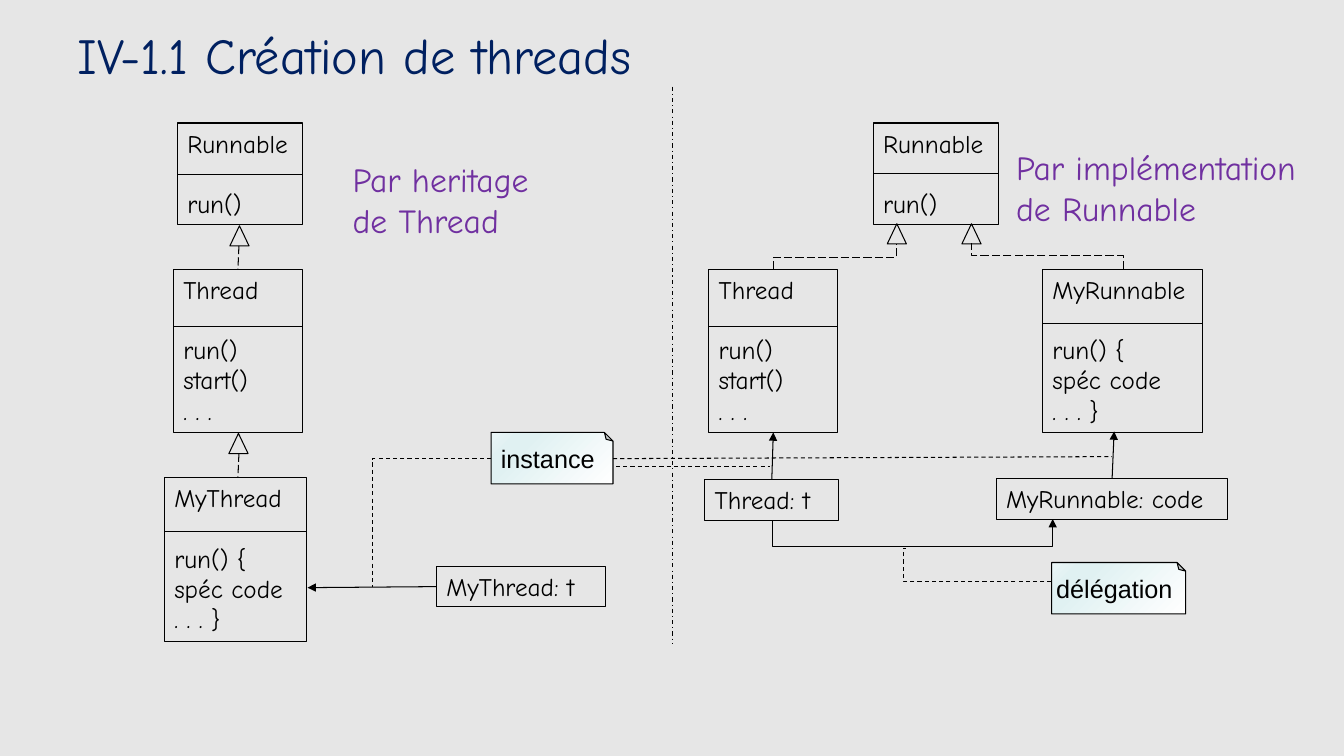
import pptx
import pptx.dml.color
import pptx.enum.dml
import pptx.enum.shapes
import pptx.enum.text
import pptx.oxml
import pptx.oxml.ns
import pptx.util
from lxml import etree

Inches = pptx.util.Inches
SHAPES = pptx.enum.shapes.MSO_SHAPE
CONNECTORS = pptx.enum.shapes.MSO_CONNECTOR
DASHES = pptx.enum.dml.MSO_LINE
ANCHORS = pptx.enum.text.MSO_ANCHOR
ALIGNMENTS = pptx.enum.text.PP_ALIGN

THEME = {
    "background": "E6E6E6", "title": "002060", "ink": "000000", "caption": "7030A0",
    "font": "Comic Neue", "note_font": "Arial",
    "title_size": 36, "caption_size": 24, "body_size": 18,
    "member_gap": 21.5, "line_width": 0.75,
    "note_stops": ((0, "FFFFFF"), (74, "E0F1F2"), (83, "E0F1F2"), (100, "EBF6F7")),
    "note_angle": 315,
}

TITLE = ("IV-1.1 Création de threads", (0.67, 0.22, 12, 0.64))
CAPTIONS = [
    (("Par heritage", "de Thread"), (3.4, 1.53, 2.24, 0.91)),
    (("Par implémentation", "de Runnable"), (9.98, 1.41, 3.18, 0.91)),
]
THREAD_MEMBERS = ("run()", "start()", ". . .")
CUSTOM_MEMBERS = ("run() {", "spéc code", ". . . }")
CLASSES = {
    "left Runnable": ("Runnable", ("run()",), (1.76, 1.22, 1.24, 1.01), 0.51),
    "left Thread": ("Thread", THREAD_MEMBERS, (1.72, 2.67, 1.28, 1.62), 0.57),
    "MyThread": ("MyThread", CUSTOM_MEMBERS, (1.63, 4.74, 1.41, 1.62), 0.53),
    "right Runnable": ("Runnable", ("run()",), (8.66, 1.22, 1.24, 1.01), 0.5),
    "right Thread": ("Thread", THREAD_MEMBERS, (7.03, 2.67, 1.28, 1.62), 0.57),
    "MyRunnable": ("MyRunnable", CUSTOM_MEMBERS, (10.34, 2.67, 1.59, 1.62), 0.54),
}
OBJECTS = {
    "MyThread: t": (4.33, 5.62, 1.68, 0.4),
    "Thread: t": (6.99, 4.76, 1.33, 0.4),
    "MyRunnable: code": (9.88, 4.75, 2.3, 0.4),
}
NOTES = [
    ("instance", (5.22, 3.94, 0.51, 1.21)),
    ("délégation", (10.84, 5.17, 0.51, 1.33)),
]
TRIANGLE_SIZE = (0.19, 0.2)
TRIANGLES = [(8.8, 2.22), (9.54, 2.22), (2.28, 2.24), (2.27, 4.3)]
STEMS = [((2.37, 2.44), (2.36, 2.67)), ((2.37, 4.5), (2.36, 4.73))]
INSTANCE_ARROWS = [
    ("MyThread: t", 1, (3.05, 5.83), None),
    ("Thread: t", 0, (7.67, 4.29), "right Thread"),
    ("MyRunnable: code", 0, (11.05, 4.28), None),
]
NOTE_LINES = [((6.08, 4.55), (11.03, 4.53)), ((6.11, 4.63), (7.64, 4.63))]
SEPARATOR = ((6.67, 0.86), (6.67, 6.39))
ELBOWS = [
    ("bentConnector3", (10.26, 1.79, 0.26, 1.5), 270, "V", (), DASHES.LONG_DASH, False),
    ("bentConnector3", (8.16, 1.94, 0.25, 1.22), 90, "HV", (), DASHES.LONG_DASH, False),
    ("bentConnector2", (3.69, 4.55, 1.18, 1.27), 180, "V", (), DASHES.DASH, False),
    ("bentConnector4", (9.04, 3.77, 0.02, 2.78), 90, "HV", (-12.5, 1), None, True),
    ("bentConnector3", (8.99, 5.44, 1.44, 0.33), 180, "", (1.02,), DASHES.DASH, False),
]


def color(name):
    return pptx.dml.color.RGBColor.from_string(THEME[name])


def write_text(shape, lines, *, size="body_size", font="font", ink="ink", gap_at=None,
               align=ALIGNMENTS.LEFT, anchor=ANCHORS.TOP, inset=None):
    frame = shape.text_frame
    frame.word_wrap = True
    frame.vertical_anchor = anchor
    if inset is not None:
        frame.margin_left = frame.margin_right = Inches(inset)
        frame.margin_top = frame.margin_bottom = Inches(inset)
    for index, line in enumerate(lines):
        paragraph = frame.paragraphs[0] if index == 0 else frame.add_paragraph()
        paragraph.alignment = align
        if index == gap_at:
            paragraph.space_before = pptx.util.Pt(THEME["member_gap"])
        run = paragraph.add_run()
        run.text = line
        run.font.name = THEME[font]
        run.font.size = pptx.util.Pt(THEME[size])
        run.font.color.rgb = color(ink)


def draw_line(target, dash=None):
    target.line.color.rgb = color("ink")
    target.line.width = pptx.util.Pt(THEME["line_width"])
    if dash is not None:
        target.line.dash_style = dash


def add_outline(slide, kind, box):
    shape = slide.shapes.add_shape(kind, *map(Inches, box))
    shape.shadow.inherit = False
    shape.fill.background()
    draw_line(shape)
    return shape


def add_line(slide, start, end, *, kind=CONNECTORS.STRAIGHT, dash=None, arrow=False):
    connector = slide.shapes.add_connector(kind, *map(Inches, (*start, *end)))
    draw_line(connector, dash)
    if arrow:
        line_element = connector.line._get_or_add_ln()
        etree.SubElement(line_element, pptx.oxml.ns.qn("a:tailEnd"), type="triangle")
    etree.SubElement(connector._element.spPr, pptx.oxml.ns.qn("a:effectLst"))
    return connector


def add_elbow(slide, preset, box, rotation, flips, adjustments, dash, arrow):
    left, top, width, height = box
    connector = add_line(slide, (left, top), (left + width, top + height),
                         kind=CONNECTORS.ELBOW, dash=dash, arrow=arrow)
    properties = connector._element.spPr
    transform = properties.find(pptx.oxml.ns.qn("a:xfrm"))
    transform.set("rot", str(rotation * 60000))
    for axis in flips:
        transform.set("flip" + axis, "1")
    geometry = properties.find(pptx.oxml.ns.qn("a:prstGeom"))
    geometry.set("prst", preset)
    values = geometry.find(pptx.oxml.ns.qn("a:avLst"))
    for number, ratio in enumerate(adjustments, 1):
        etree.SubElement(values, pptx.oxml.ns.qn("a:gd"), name=f"adj{number}",
                         fmla=f"val {round(ratio * 100000)}")


def add_class(slide, name, members, box, header_height):
    left, top, width, height = box
    shape = add_outline(slide, SHAPES.RECTANGLE, box)
    write_text(shape, (name, *members), gap_at=1)
    divider = top + header_height
    add_line(slide, (left + width, divider), (left, divider))
    return shape


def add_note(slide, text, box):
    shape = add_outline(slide, SHAPES.FOLDED_CORNER, box)
    shape.rotation = 270
    stops = "".join(f'<a:gs pos="{position * 1000}"><a:srgbClr val="{value}"/></a:gs>'
                    for position, value in THEME["note_stops"])
    gradient = pptx.oxml.parse_xml(
        f'<a:gradFill {pptx.oxml.ns.nsdecls("a")} rotWithShape="1"><a:gsLst>{stops}</a:gsLst>'
        f'<a:lin ang="{THEME["note_angle"] * 60000}" scaled="1"/></a:gradFill>')
    properties = shape._element.spPr
    properties.replace(properties.find(pptx.oxml.ns.qn("a:noFill")), gradient)
    write_text(shape, (text,), font="note_font", align=ALIGNMENTS.CENTER,
               anchor=ANCHORS.MIDDLE, inset=0)
    shape.text_frame._txBody.bodyPr.set("vert", "vert")


def main():
    presentation = pptx.Presentation()
    presentation.slide_width, presentation.slide_height = Inches(13.33), Inches(7.5)
    slide = presentation.slides.add_slide(presentation.slide_layouts[6])
    slide.background.fill.solid()
    slide.background.fill.fore_color.rgb = color("background")

    title, title_box = TITLE
    write_text(slide.shapes.add_textbox(*map(Inches, title_box)), (title,),
               size="title_size", ink="title", anchor=ANCHORS.MIDDLE)
    class_shapes = {key: add_class(slide, *parts) for key, parts in CLASSES.items()}
    for text, box in NOTES:
        add_note(slide, text, box)
    object_shapes = {}
    for name, box in OBJECTS.items():
        object_shapes[name] = add_outline(slide, SHAPES.RECTANGLE, box)
        write_text(object_shapes[name], (name,))
    for corner in TRIANGLES:
        add_outline(slide, SHAPES.ISOSCELES_TRIANGLE, corner + TRIANGLE_SIZE)
    for start, end in STEMS:
        add_line(slide, start, end, dash=DASHES.LONG_DASH)
    for name, side, end, class_key in INSTANCE_ARROWS:
        arrow = add_line(slide, end, end, arrow=True)
        arrow.begin_connect(object_shapes[name], side)
        if class_key:
            arrow.end_connect(class_shapes[class_key], 2)
    for elbow in ELBOWS:
        add_elbow(slide, *elbow)
    for start, end in NOTE_LINES:
        add_line(slide, start, end, dash=DASHES.DASH)
    for lines, box in CAPTIONS:
        write_text(slide.shapes.add_textbox(*map(Inches, box)), lines,
                   size="caption_size", ink="caption")
    add_line(slide, *SEPARATOR, dash=DASHES.DASH_DOT)
    presentation.save("out.pptx")


if __name__ == "__main__":
    main()
